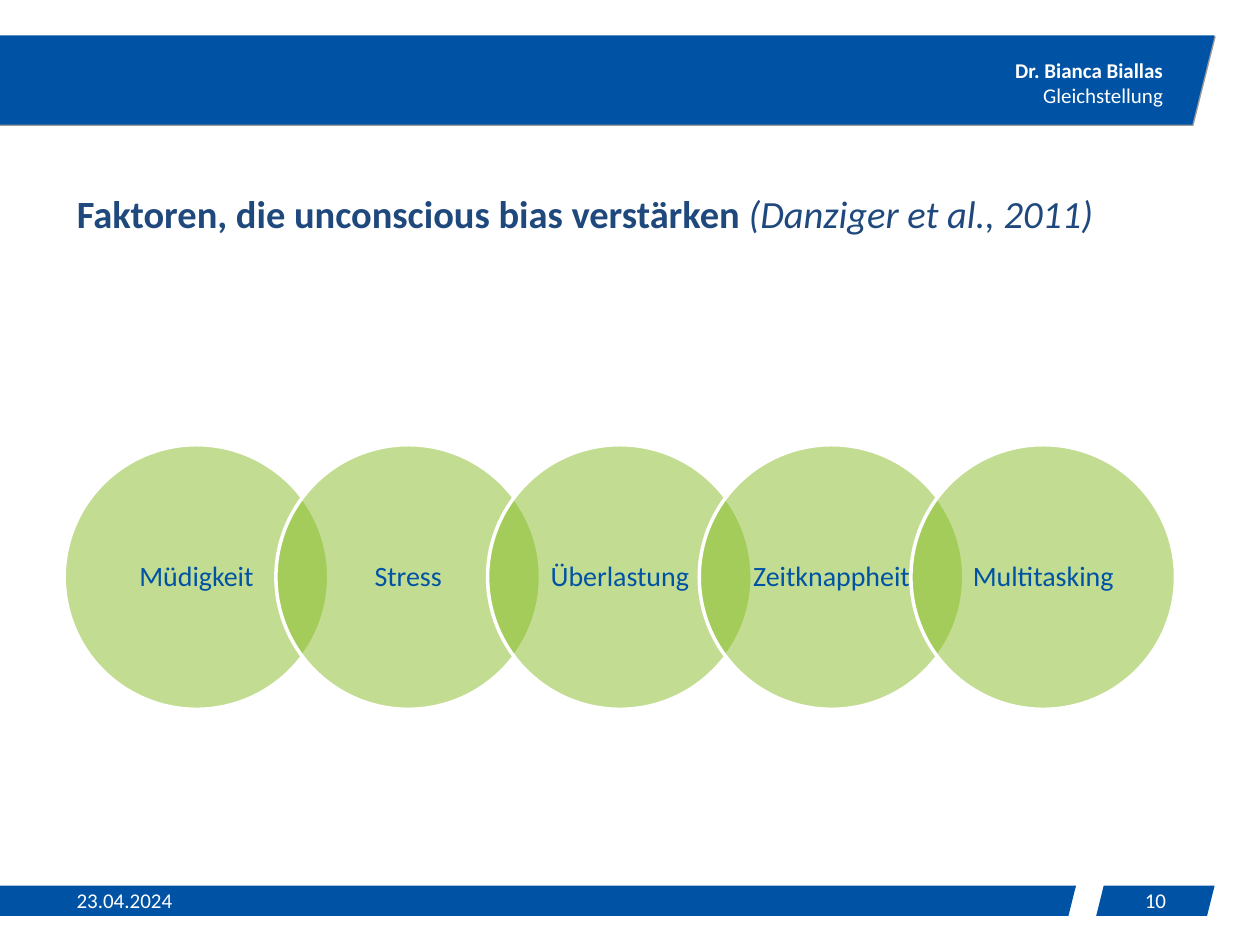
from lxml import etree
from pptx import Presentation
from pptx.dml.color import RGBColor
from pptx.enum.shapes import MSO_SHAPE as Shape
from pptx.enum.text import MSO_ANCHOR as Anchor, PP_ALIGN as Align
from pptx.oxml import parse_xml
from pptx.oxml.ns import nsdecls, qn
from pptx.util import Inches, Pt

COLORS = {"blue": "0053A4", "navy": "1F497D", "green": "86BC25", "white": "FFFFFF"}
FACTORS = ["Müdigkeit", "Stress", "Überlastung", "Zeitknappheit", "Multitasking"]


def color(name):
    return RGBColor.from_string(COLORS[name])


def add_span(para, text, size, tint, bold=False, italic=False):
    span = para.add_run()
    span.text = text
    font = span.font
    font.name, font.size, font.bold, font.italic = "Calibri", Pt(size), bold, italic
    font.color.rgb = color(tint)


def add_band(page, left, top, width, height):
    band = page.shapes.add_shape(
        Shape.PARALLELOGRAM, Inches(left), Inches(top), Inches(width), Inches(height))
    band.shadow.inherit = False
    band.fill.solid()
    band.fill.fore_color.rgb = color("blue")
    band.line.fill.background()
    return band


def add_text(page, left, top, width, height, lines, align, anchor=Anchor.MIDDLE):
    """Place a text box; lines holds (text, bold) pairs, one per paragraph."""
    box = page.shapes.add_textbox(Inches(left), Inches(top), Inches(width), Inches(height))
    frame = box.text_frame
    frame.word_wrap = True
    frame.vertical_anchor = anchor
    for index, (text, bold) in enumerate(lines):
        para = frame.add_paragraph() if index else frame.paragraphs[0]
        para.alignment = align
        add_span(para, text, 12, "white", bold)


def add_header(page, left, top, width, height):
    band = add_band(page, left, top, width, height)
    effects = band._element.spPr.find(qn("a:effectLst"))
    effects.append(parse_xml(
        f'<a:outerShdw {nsdecls("a")} blurRad="0" dist="12700" dir="2700000">'
        '<a:srgbClr val="000000"><a:alpha val="40000"/></a:srgbClr></a:outerShdw>'))
    add_text(page, left + width - 1.91, top + 0.13, 1.6, 0.5,
             [("Dr. Bianca Biallas", True), ("Gleichstellung", False)],
             Align.RIGHT, Anchor.TOP)


def add_title(page, left, top, width, height):
    title = page.shapes.title
    title.left, title.top = Inches(left), Inches(top)
    title.width, title.height = Inches(width), Inches(height)
    title.text_frame.vertical_anchor = Anchor.BOTTOM
    para = title.text_frame.paragraphs[0]
    para.alignment = Align.LEFT
    para.line_spacing = 0.9
    add_span(para, "Faktoren, die unconscious bias verstärken ", 22, "navy", bold=True)
    add_span(para, "(Danziger et al., 2011)", 22, "navy", italic=True)


def add_factor_chain(page, left, top, diameter):
    """Draw a row of see-through circles, each overlapping the next by a fifth."""
    for index, factor in enumerate(FACTORS):
        circle = page.shapes.add_shape(
            Shape.OVAL, Inches(left + index * 0.8 * diameter), Inches(top),
            Inches(diameter), Inches(diameter))
        circle.shadow.inherit = False
        circle.fill.solid()
        circle.fill.fore_color.rgb = color("green")
        tint = circle._element.spPr.find(qn("a:solidFill"))[0]
        etree.SubElement(tint, qn("a:alpha"), val="50000")
        circle.line.color.rgb = color("white")
        circle.line.width = Pt(2)
        frame = circle.text_frame
        frame.word_wrap = False
        frame.vertical_anchor = Anchor.MIDDLE
        para = frame.paragraphs[0]
        para.alignment = Align.CENTER
        para.line_spacing = 0.9
        add_span(para, factor, 16, "blue")


def add_footer(page, left, top, width, height):
    number_width, gap = 0.94, 0.16
    number_left = left + width - number_width
    add_band(page, left, top, width - number_width - gap, height)
    add_band(page, number_left, top, number_width, height)
    add_text(page, 0.51, top - 0.05, 1.1, 0.32, [("23.04.2024", False)], Align.LEFT)
    add_text(page, number_left, top - 0.05, number_width, 0.32, [("10", False)], Align.CENTER)


def main():
    deck = Presentation()
    deck.slide_width, deck.slide_height = Inches(10), Inches(7.5)
    page = deck.slides.add_slide(deck.slide_layouts[5])
    add_footer(page, -0.2, 7.03, 9.84, 0.24)
    add_header(page, -0.2, 0.28, 9.84, 0.71)
    add_title(page, 0.51, 1.31, 8.98, 0.62)
    add_factor_chain(page, 0.51, 3.53, 2.1)
    deck.save("out.pptx")


if __name__ == "__main__":
    main()
